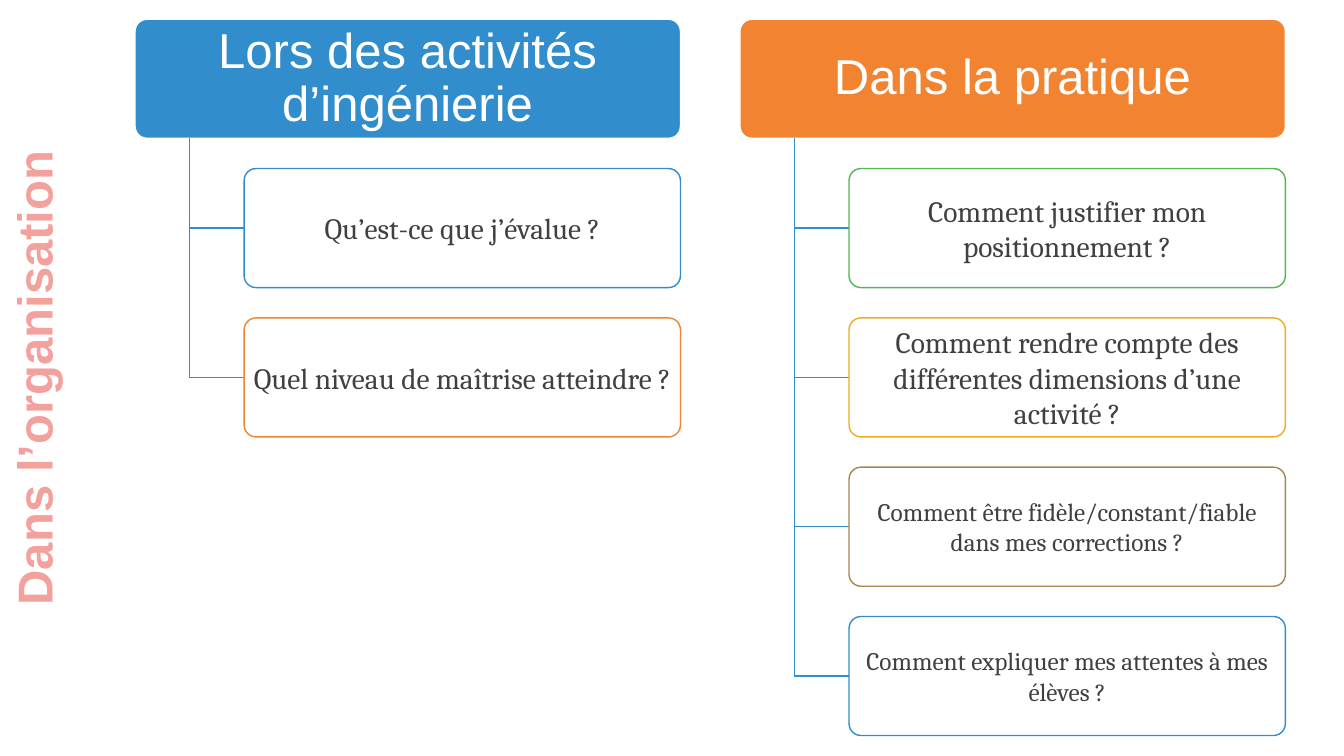
from dataclasses import dataclass
from pptx import Presentation
from pptx.dml.color import RGBColor
from pptx.enum.shapes import MSO_SHAPE
from pptx.enum.text import MSO_ANCHOR, PP_ALIGN
from pptx.util import Inches, Pt

ROUND = MSO_SHAPE.ROUNDED_RECTANGLE
MIDDLE, TOP = MSO_ANCHOR.MIDDLE, MSO_ANCHOR.TOP
CENTER = PP_ALIGN.CENTER
WIDE, HIGH = Inches(13.33), Inches(7.5)


@dataclass(frozen=True)
class Theme:
    """Colours, fonts and sizes of the slide."""
    blue: str = "318DCB"
    orange: str = "F28330"
    green: str = "50B852"
    gold: str = "EEAD1D"
    brown: str = "A68555"
    pink: str = "F3A19D"
    white: str = "FFFFFF"
    ink: str = "404040"
    sans: str = "Arial"
    serif: str = "Cambria"
    big: int = 35
    mid: int = 21
    small: int = 18


THEME = Theme()
TREES = [
    (10.05, "Lors des activités d’ingénierie", THEME.blue, [
        ("Qu’est-ce que j’évalue ?", THEME.blue, THEME.mid),
        ("Quel niveau de maîtrise atteindre ?", THEME.orange, THEME.mid),
    ]),
    (55.06, "Dans la pratique", THEME.orange, [
        ("Comment justifier mon positionnement ?", THEME.green, THEME.mid),
        ("Comment rendre compte des différentes dimensions d’une activité ?",
         THEME.gold, THEME.mid),
        ("Comment être fidèle/constant/fiable dans mes corrections ?",
         THEME.brown, THEME.small),
        ("Comment expliquer mes attentes à mes élèves ?",
         THEME.blue, THEME.small),
    ]),
]


def across(share):
    """Turn a percentage of the slide width into a length."""
    return round(WIDE * share / 100)


def down(share):
    """Turn a percentage of the slide height into a length."""
    return round(HIGH * share / 100)


def write(shape, text, font, size, color, bold=False, pad=(0.1, 0.05),
          anchor=MIDDLE, lead=1.0):
    """Put centred, formatted text in a shape."""
    frame = shape.text_frame
    frame.word_wrap = True
    frame.vertical_anchor = anchor
    frame.margin_left = frame.margin_right = Inches(pad[0])
    frame.margin_top = frame.margin_bottom = Inches(pad[1])
    para = frame.paragraphs[0]
    para.alignment = CENTER
    para.line_spacing = lead
    run = para.add_run()
    run.text = text
    run.font.name, run.font.size, run.font.bold = font, Pt(size), bold
    run.font.color.rgb = RGBColor.from_string(color)


def stroke(shape, color):
    """Give a shape a thin line and no shadow."""
    shape.shadow.inherit = False
    shape.line.color.rgb = RGBColor.from_string(color)
    shape.line.width = Pt(1)


def card(slide, box, fill, line):
    """Draw a rounded card in the box."""
    shape = slide.shapes.add_shape(ROUND, *box)
    shape.adjustments[0] = 0.1
    shape.fill.solid()
    shape.fill.fore_color.rgb = RGBColor.from_string(fill)
    stroke(shape, line)
    return shape


def branch(slide, left, top, right, bottom):
    """Draw an elbow from a header down to a card."""
    pen = slide.shapes.build_freeform(left, top)
    pen.add_line_segments([(left, bottom), (right, bottom)], close=False)
    elbow = pen.convert_to_shape()
    elbow.fill.background()
    stroke(elbow, THEME.blue)


def tree(slide, box, head, color, leaves):
    """Draw a header and its hanging cards, from the header box."""
    left, top, width, height = box
    indent = round(width / 10)
    inner = left + 2 * indent
    title = card(slide, box, color, THEME.white)
    write(title, head, THEME.sans, THEME.big, THEME.white,
          pad=(0.07, 0.05), lead=0.9)
    for row, (text, line, size) in enumerate(leaves, 1):
        y = top + row * down(19.75)
        branch(slide, left + indent, top + height, inner, y + height // 2)
        leaf = card(slide, (inner, y, width - 2 * indent, height),
                    THEME.white, line)
        write(leaf, text, THEME.serif, size, THEME.ink, pad=(0.04, 0.03))


def banner(slide, box, text):
    """Write the vertical title, turned about the centre of its box."""
    left, top, width, height = box
    label = slide.shapes.add_textbox(left + (width - height) // 2,
                                     top + (height - width) // 2,
                                     height, width)
    label.rotation = 270
    write(label, text, THEME.sans, THEME.big, THEME.pink, bold=True,
          anchor=TOP)


def main():
    """Build and save the slide."""
    deck = Presentation()
    deck.slide_width, deck.slide_height = WIDE, HIGH
    slide = deck.slides.add_slide(deck.slide_layouts[6])
    banner(slide, (across(-0.1), 0, across(5.18), HIGH), "Dans l’organisation")
    for left, head, color, leaves in TREES:
        box = across(left), down(2.55), across(40.58), down(15.75)
        tree(slide, box, head, color, leaves)
    deck.save("out.pptx")


if __name__ == "__main__":
    main()
